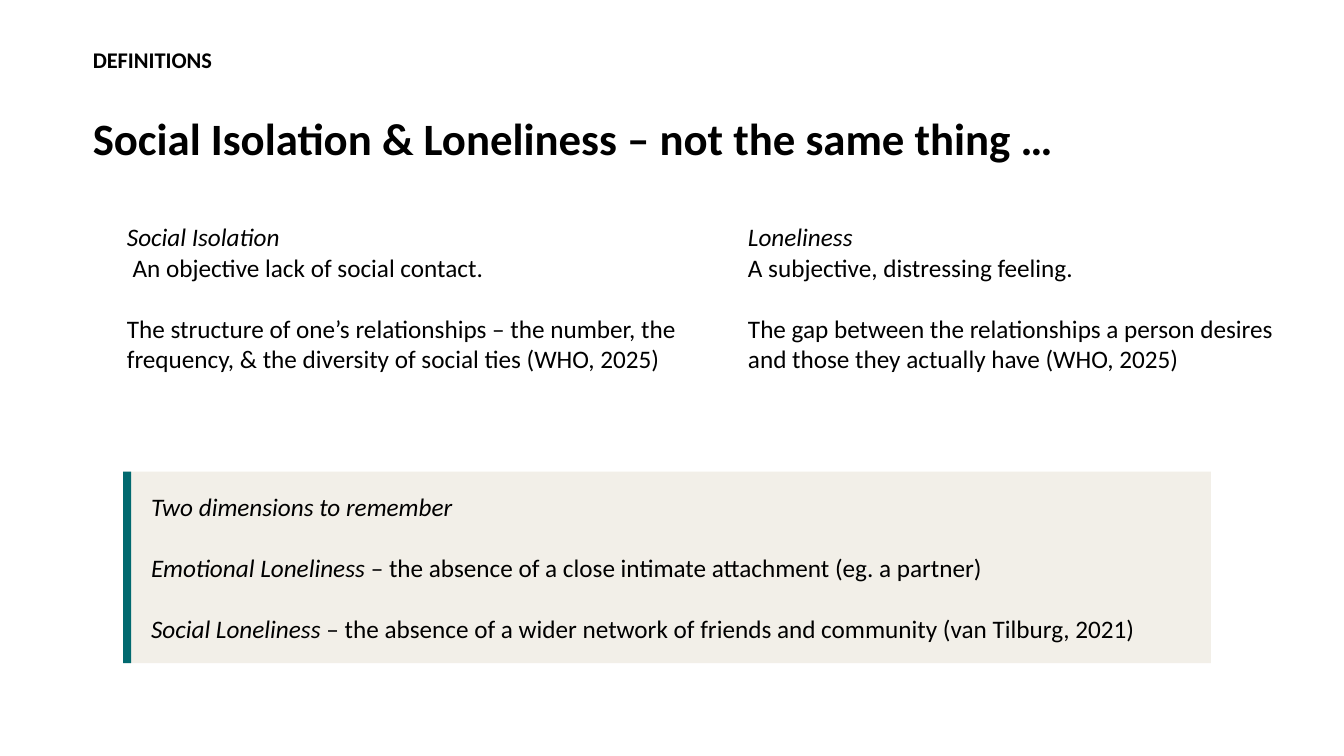
from pptx import Presentation
from pptx.dml.color import RGBColor
from pptx.enum.shapes import MSO_SHAPE
from pptx.enum.text import MSO_ANCHOR, MSO_AUTO_SIZE, PP_ALIGN
from pptx.util import Inches, Pt

BLACK, TEAL, SAND = "000000", "01696F", "F2EFE8"
BODY_SIZE = 18
BLANK_LINE = 22  # points between groups of body text
COLUMN_LEFT, COLUMN_STEP = 1.16, 6.16

DEFINITIONS = [
    [
        (0, [("Social Isolation", True)]),
        (0, [(" An objective lack of social contact.", False)]),
        (BLANK_LINE, [("The structure of one’s relationships – the number, the "
                       "frequency, & the diversity of social ties (WHO, 2025)", False)]),
    ],
    [
        (0, [("Loneliness", True)]),
        (0, [("A subjective, distressing feeling.", False)]),
        (BLANK_LINE, [("The gap between the relationships a person desires "
                       "and those they actually have (WHO, 2025)", False)]),
    ],
]
DIMENSIONS = [
    (0, [("Two dimensions to remember", True)]),
    (BLANK_LINE, [("Emotional Loneliness ", True),
                  ("– the absence of a close intimate attachment (eg. a partner)", False)]),
    (BLANK_LINE, [("Social Loneliness ", True),
                  ("– the absence of a wider network of friends and community "
                   "(van Tilburg, 2021)", False)]),
]


def color(hex_value):
    return RGBColor.from_string(hex_value)


def apply(target, formats):
    for attribute, value in formats.items():
        setattr(target, attribute, value)


def add_run(paragraph, text, size, **emphasis):
    run = paragraph.add_run()
    run.text = text
    apply(run.font, {"name": "Calibri", "size": Pt(size), **emphasis})
    run.font.color.rgb = color(BLACK)


def next_paragraph(frame, index, gap):
    paragraph = frame.add_paragraph() if index else frame.paragraphs[0]
    if gap:
        paragraph.space_before = Pt(gap)
    return paragraph


def add_heading(slide, left, top, width, height):
    title = slide.shapes.title
    apply(title, {"left": Inches(left), "top": Inches(top),
                  "width": Inches(width), "height": Inches(height)})
    frame = title.text_frame
    apply(frame, {"margin_left": 0, "margin_right": 0, "word_wrap": True,
                  "margin_top": Inches(0.05), "margin_bottom": Inches(0.05),
                  "vertical_anchor": MSO_ANCHOR.MIDDLE,
                  "auto_size": MSO_AUTO_SIZE.NONE})
    lines = [("DEFINITIONS", 16, 0),
             ("Social Isolation & Loneliness – not the same thing …", 32, 31)]
    for index, (text, size, gap) in enumerate(lines):
        paragraph = next_paragraph(frame, index, gap)
        apply(paragraph, {"alignment": PP_ALIGN.LEFT, "line_spacing": 0.9})
        add_run(paragraph, text, size, bold=True)


def add_body_text(slide, left, top, width, height, content):
    box = slide.shapes.add_textbox(*map(Inches, (left, top, width, height)))
    frame = box.text_frame
    frame.word_wrap = True
    for index, (gap, phrases) in enumerate(content):
        paragraph = next_paragraph(frame, index, gap)
        for text, italic in phrases:
            add_run(paragraph, text, BODY_SIZE, italic=italic)


def add_block(slide, left, top, width, height, fill):
    block = slide.shapes.add_shape(
        MSO_SHAPE.RECTANGLE, *map(Inches, (left, top, width, height)))
    block.shadow.inherit = False
    block.fill.solid()
    block.fill.fore_color.rgb = color(fill)
    block.line.fill.background()


def add_callout(slide, left, top, width, height):
    inset = 0.18
    add_block(slide, left, top, width, height, SAND)
    add_block(slide, left, top, 0.08, height, TEAL)
    add_body_text(slide, left + inset, top + 0.14, width - 2 * inset,
                  height - 0.28, DIMENSIONS)


def main():
    deck = Presentation()
    apply(deck, {"slide_width": Inches(13.33), "slide_height": Inches(7.5)})
    slide = deck.slides.add_slide(deck.slide_layouts[5])
    add_heading(slide, 0.92, 0.34, 11.5, 1.45)
    for column, definition in enumerate(DEFINITIONS):
        add_body_text(slide, COLUMN_LEFT + column * COLUMN_STEP, 2.15, 5.75, 1.62,
                      definition)
    add_callout(slide, 1.22, 4.68, 10.79, 1.9)
    deck.save("out.pptx")


if __name__ == "__main__":
    main()
